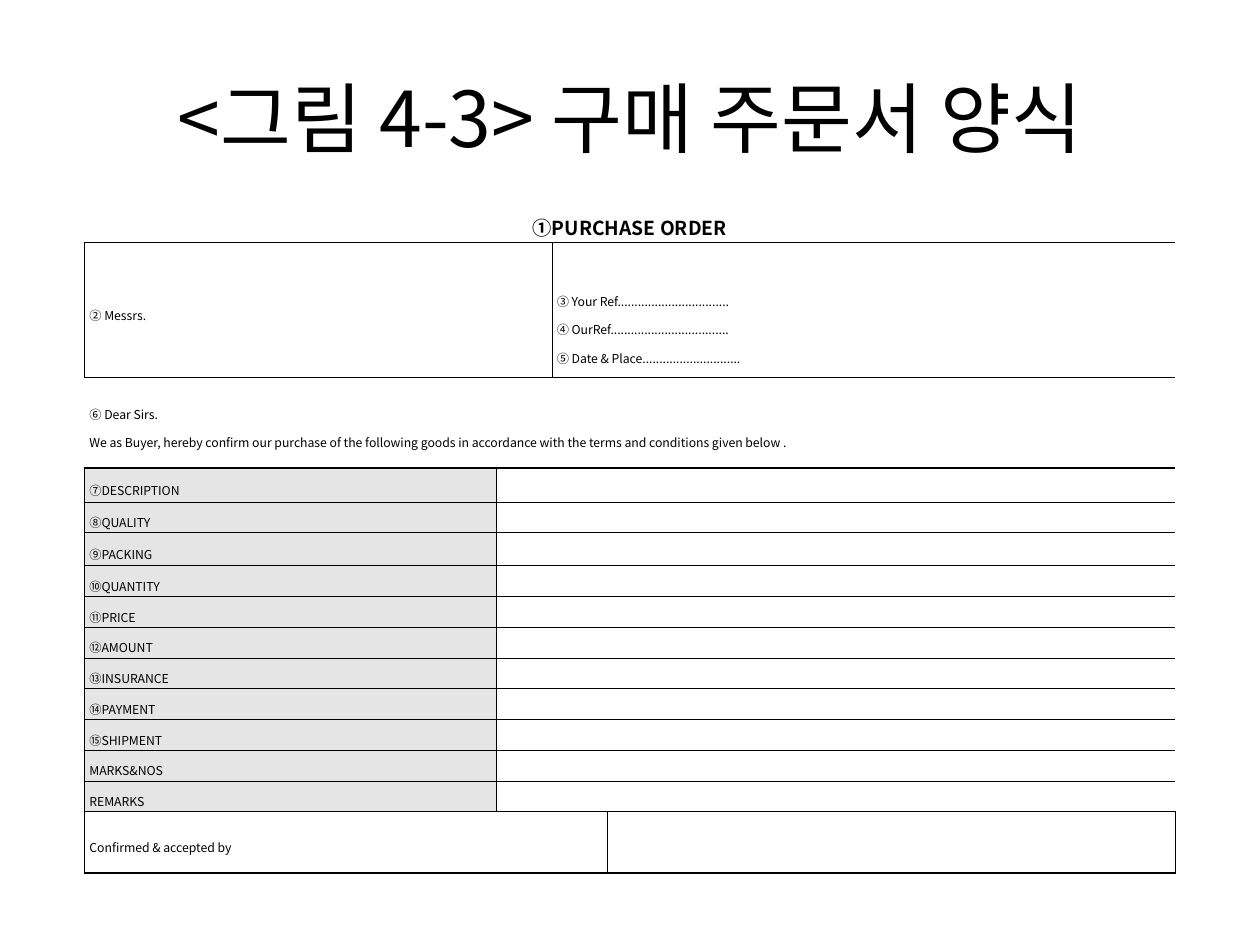
from lxml import etree
from pptx import Presentation
from pptx.dml.color import RGBColor
from pptx.enum.text import MSO_ANCHOR, PP_ALIGN
from pptx.oxml.ns import qn
from pptx.util import Inches, Pt

MIDDLE, TOP = MSO_ANCHOR.MIDDLE, MSO_ANCHOR.TOP
CENTER, JUSTIFY = PP_ALIGN.CENTER, PP_ALIGN.JUSTIFY
FONT = "Noto Sans CJK KR"
COLORS = {"ink": "000000", "label": "E5E5E5"}
THIN, THICK = 0.25, 1.7


def style(para, size, bold=False):
    for run in para.runs:
        run.font.size, run.font.bold, run.font.name = Pt(size), bold, FONT
        run.font.color.rgb = RGBColor.from_string(COLORS["ink"])
        etree.SubElement(run.font._element, qn("a:ea"), typeface=FONT)
    if not para.runs:
        etree.SubElement(para._p, qn("a:endParaRPr"), sz=str(size * 100))


def border(cell, widths):
    """Draw the left, right, top and bottom lines; a width of 0 means none."""
    props = cell._tc.get_or_add_tcPr()
    for side, width in zip("LRTB", widths):
        line = etree.SubElement(props, qn(f"a:ln{side}"), w=str(Pt(width)))
        if width:
            fill = etree.SubElement(line, qn("a:solidFill"))
            etree.SubElement(fill, qn("a:srgbClr"), val=COLORS["ink"])
        else:
            etree.SubElement(line, qn("a:noFill"))


prs = Presentation()
prs.slide_width, prs.slide_height = Inches(10), Inches(7.5)
slide = prs.slides.add_slide(prs.slide_layouts[5])

title = slide.shapes.title
title.left, title.top = Inches(0.5), Inches(0.3)
title.width, title.height = Inches(9), Inches(1.25)
title.text_frame.text = "<그림 4-3> 구매 주문서 양식"
title.text_frame.vertical_anchor = MIDDLE
title.text_frame.paragraphs[0].alignment = CENTER
style(title.text_frame.paragraphs[0], 44)

refs = "\n".join([
    "③ Your Ref................................. ",
    "④ OurRef................................... ",
    "⑤ Date & Place............................. ",
])
letter = ("⑥ Dear Sirs.\nWe as Buyer, hereby confirm our purchase of the following "
          "goods in accordance with the terms and conditions given below .")
labels = ["⑦DESCRIPTION", "⑧QUALITY", "⑨PACKING", "⑩QUANTITY", "⑪PRICE", "⑫AMOUNT",
          "⑬INSURANCE", "⑭PAYMENT", "⑮SHIPMENT", "MARKS&NOS", "REMARKS"]
tall = [0.27, 0.23, 0.26, 0.21] + [0.2] * 7

# Each row: height, (text, columns spanned) per cell, then side, top and bottom lines
rows = [
    (0.31, [("①PURCHASE ORDER", 4)], (0, 0, THIN)),
    (1.07, [("② Messrs.", 2), (refs, 2)], (THIN, THIN, THIN)),
    (0.72, [(letter, 4)], (0, THIN, THICK)),
]
for label, height in zip(labels, tall):
    top = THICK if label == labels[0] else THIN
    rows.append((height, [(label, 1), ("", 3)], (THIN, top, THIN)))
rows.append((0.49, [("Confirmed & accepted by ", 3), ("", 1)], (THIN, THIN, THICK)))

frame = slide.shapes.add_table(len(rows), 4, Inches(0.67), Inches(1.55),
                               Inches(8.66), Inches(5.04))
table = frame.table
table.first_row = table.horz_banding = False
for col, width in zip(table.columns, [3.27, 0.44, 0.44, 4.51]):
    col.width = Inches(width)

for r, (height, cells, (side, top, bottom)) in enumerate(rows):
    table.rows[r].height = Inches(height)
    start = 0
    for text, span in cells:
        end = start + span - 1
        cell = table.cell(r, start)
        if span > 1:
            cell.merge(table.cell(r, end))
        cell.text_frame.text = text
        cell.vertical_anchor = TOP if text == "REMARKS" else MIDDLE
        cell.margin_left = cell.margin_right = Inches(0.04)
        cell.margin_top = Inches(0.24 if text == refs else 0.01)
        cell.margin_bottom = Inches(0.01)
        for para in cell.text_frame.paragraphs:
            para.alignment = JUSTIFY if r else CENTER
            para.line_spacing = 1.6
            style(para, 7 if r else 11, bold=r == 0)
        for c in range(start, end + 1):
            part = table.cell(r, c)
            border(part, (side if c == start else 0, side if c == end else 0, top, bottom))
            if text in labels:
                part.fill.solid()
                part.fill.fore_color.rgb = RGBColor.from_string(COLORS["label"])
            else:
                part.fill.background()
            if c > start:
                style(part.text_frame.paragraphs[0], 7)
        start = end + 1

prs.save("out.pptx")
